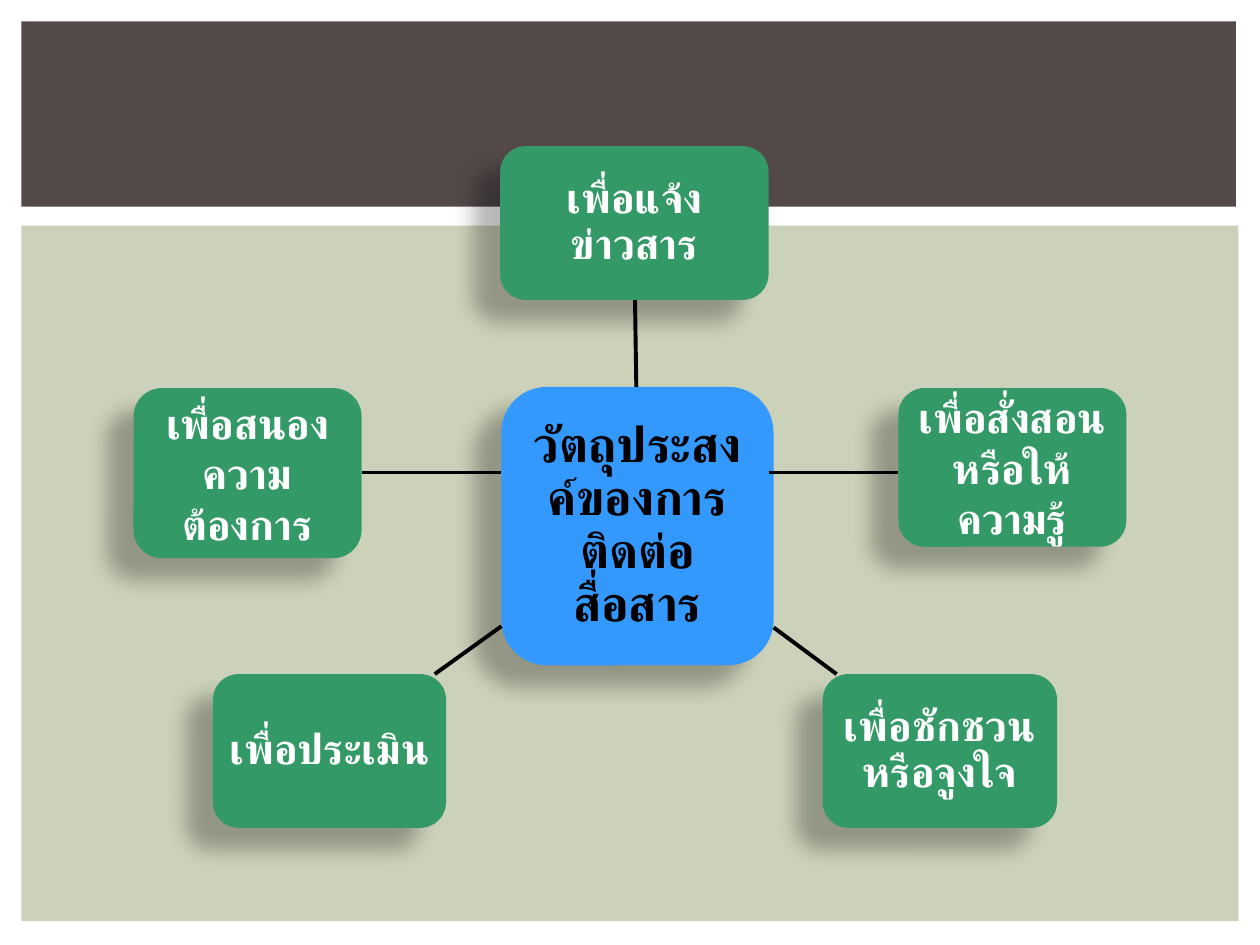
from dataclasses import dataclass
from typing import Optional

from lxml.etree import SubElement
from pptx import Presentation
from pptx.dml.color import RGBColor
from pptx.enum.shapes import MSO_CONNECTOR, MSO_SHAPE
from pptx.enum.text import MSO_ANCHOR, PP_ALIGN
from pptx.oxml.ns import qn
from pptx.util import Inches, Pt

BAND = RGBColor(0x53, 0x49, 0x49)
PANEL = RGBColor(0xCC, 0xD1, 0xB9)
BLUE = RGBColor(0x33, 0x99, 0xFF)
GREEN = RGBColor(0x33, 0x99, 0x66)
BLACK = RGBColor(0, 0, 0)
WHITE = RGBColor(0xFF, 0xFF, 0xFF)
FONT = "Calibri"


@dataclass
class Node:
    text: str
    left: float
    top: float
    width: float
    height: float
    fill: RGBColor = GREEN
    color: RGBColor = WHITE
    size: int = 24
    inset_x: float = 0.07
    inset_y: float = 0.07
    spacing: Optional[float] = 0.9


@dataclass
class Link:
    x1: float
    y1: float
    x2: float
    y2: float


HUB = Node("วัตถุประสงค์ของการติดต่อสื่อสาร", 3.98, 3.07, 2.16, 2.21,
           BLUE, BLACK, 28, 0.08, 0.08)
INNER_LINKS = [
    Link(5.05, 3.07, 5.04, 2.38),
    Link(6.14, 4.98, 6.64, 5.35),
    Link(3.98, 4.97, 3.45, 5.35),
]
PURPOSES = [
    Node("เพื่อแจ้งข่าวสาร", 3.97, 1.16, 2.13, 1.22),
    Node("เพื่อชักชวน หรือจูงใจ", 6.53, 5.35, 1.86, 1.22),
    Node("เพื่อประเมิน", 1.69, 5.35, 1.85, 1.22),
    Node("เพื่อสั่งสอนหรือให้ความรู้", 7.13, 3.08, 1.81, 1.26,
         inset_x=0.1, inset_y=0.05, spacing=None),
    Node("เพื่อสนองความต้องการ", 1.06, 3.08, 1.81, 1.35,
         inset_x=0.1, inset_y=0.05, spacing=None),
]
SIDE_LINKS = [Link(2.87, 3.75, 3.98, 3.75), Link(6.1, 3.75, 7.13, 3.75)]


def add_block(s, kind, left: float, top: float, width: float, height: float,
              fill: RGBColor):
    sp = s.shapes.add_shape(kind, Inches(left), Inches(top),
                            Inches(width), Inches(height))
    sp.shadow.inherit = False
    sp.fill.solid()
    sp.fill.fore_color.rgb = fill
    sp.line.fill.background()
    return sp


def add_soft_shadow(sp) -> None:
    """Cast a blurred black shadow to the lower left."""
    effects = sp._element.spPr.find(qn("a:effectLst"))
    shadow = SubElement(effects, qn("a:outerShdw"), blurRad=str(Pt(11.8)),
                        dist=str(Pt(19.7)), dir=str(141 * 60000),
                        algn="ctr", rotWithShape="0")
    color = SubElement(shadow, qn("a:srgbClr"), val=str(BLACK))
    SubElement(color, qn("a:alpha"), val="28000")


def add_node(s, node: Node) -> None:
    sp = add_block(s, MSO_SHAPE.ROUNDED_RECTANGLE, node.left, node.top,
                   node.width, node.height, node.fill)
    add_soft_shadow(sp)
    tf = sp.text_frame
    tf.word_wrap = True
    tf.vertical_anchor = MSO_ANCHOR.MIDDLE
    tf.margin_left = tf.margin_right = Inches(node.inset_x)
    tf.margin_top = tf.margin_bottom = Inches(node.inset_y)
    p = tf.paragraphs[0]
    p.text = node.text
    p.alignment = PP_ALIGN.CENTER
    p.line_spacing = node.spacing
    p.font.name = FONT
    p.font.size = Pt(node.size)
    p.font.bold = True
    p.font.color.rgb = node.color


def add_link(s, link: Link) -> None:
    line = s.shapes.add_connector(MSO_CONNECTOR.STRAIGHT, Inches(link.x1),
                                  Inches(link.y1), Inches(link.x2),
                                  Inches(link.y2))
    line.line.color.rgb = BLACK
    line.line.width = Pt(2.25)
    SubElement(line._element.spPr, qn("a:effectLst"))


def main() -> None:
    prs = Presentation()
    prs.slide_width, prs.slide_height = Inches(10), Inches(7.5)
    s = prs.slides.add_slide(prs.slide_layouts[6])
    add_block(s, MSO_SHAPE.RECTANGLE, 0.17, 1.79, 9.66, 5.52, PANEL)
    add_block(s, MSO_SHAPE.RECTANGLE, 0.17, 0.17, 9.64, 1.47, BAND)
    add_node(s, HUB)
    for link in INNER_LINKS:
        add_link(s, link)
    for node in PURPOSES:
        add_node(s, node)
    for link in SIDE_LINKS:
        add_link(s, link)
    prs.save("out.pptx")


if __name__ == "__main__":
    main()
